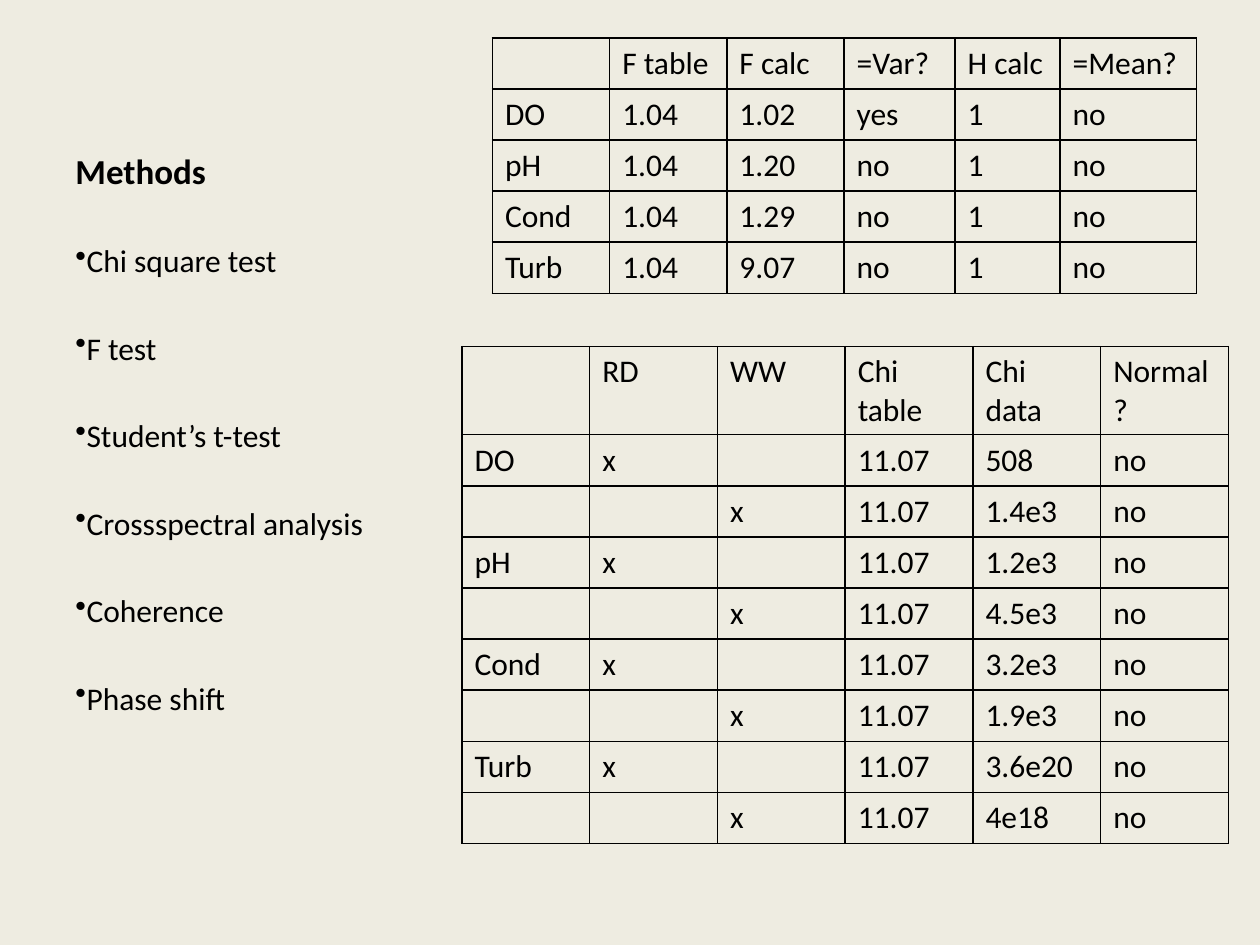
from lxml.etree import SubElement
from pptx import Presentation
from pptx.dml.color import RGBColor
from pptx.enum.text import MSO_ANCHOR as Anchor
from pptx.oxml import parse_xml
from pptx.oxml.ns import nsdecls, qn
from pptx.util import Pt

FONT = "Calibri"
INK = "000000"
PAPER = "EEECE1"
ROW_HEIGHT = 29.2
METHODS = ["Chi square test", "F test", "Student’s t-test",
           "Crossspectral analysis", "Coherence", "Phase shift"]
VARIANCE_TESTS = [
    ["", "F table", "F calc", "=Var?", "H calc", "=Mean?"],
    ["DO", "1.04", "1.02", "yes", "1", "no"],
    ["pH", "1.04", "1.20", "no", "1", "no"],
    ["Cond", "1.04", "1.29", "no", "1", "no"],
    ["Turb", "1.04", "9.07", "no", "1", "no"],
]
CHI_HEADER = ["", "RD", "WW", "Chi table", "Chi data", "Normal?"]
CHI_DATA = {"DO": ("508", "1.4e3"), "pH": ("1.2e3", "4.5e3"),
            "Cond": ("3.2e3", "1.9e3"), "Turb": ("3.6e20", "4e18")}


def color(hex_code):
    return RGBColor.from_string(hex_code)


def style_runs(paragraph, size=18, bold=False):
    for run in paragraph.runs:
        run.font.name = FONT
        run.font.size = Pt(size)
        run.font.bold = bold
        run.font.color.rgb = color(INK)


def add_text_frame(slide, top, height, anchor):
    frame = slide.shapes.add_textbox(Pt(36), Pt(top), Pt(237), Pt(height)).text_frame
    frame.word_wrap = True
    frame.vertical_anchor = anchor
    return frame


def add_heading(slide, wording):
    heading = add_text_frame(slide, 21.6, 91.4, Anchor.BOTTOM)
    heading.text = wording
    style_runs(heading.paragraphs[0], 20, True)


def add_bullets(slide, items):
    body = add_text_frame(slide, 113, 369.4, Anchor.TOP)
    body.margin_top = Pt(24.8)
    body.text = "\n".join(items)
    for index, item in enumerate(body.paragraphs):
        item.space_before = Pt(28.4 if index else 0)
        SubElement(item._p.get_or_add_pPr(), qn("a:buChar")).set("char", "•")
        style_runs(item)


def border_cell(cell):
    properties = cell._tc.get_or_add_tcPr()
    for position, side in enumerate("LRTB"):
        properties.insert(position, parse_xml(
            f'<a:ln{side} {nsdecls("a")} w="{Pt(1)}"><a:solidFill>'
            f'<a:srgbClr val="{INK}"/></a:solidFill></a:ln{side}>'))


def add_grid(slide, left, top, widths, rows):
    table = slide.shapes.add_table(
        len(rows), len(widths), Pt(left), Pt(top),
        Pt(sum(widths)), Pt(ROW_HEIGHT * len(rows))).table
    table.first_row = table.horz_banding = False
    for column, width in zip(table.columns, widths):
        column.width = Pt(width)
    for row, values in zip(table.rows, rows):
        row.height = Pt(ROW_HEIGHT)
        for cell, value in zip(row.cells, values):
            cell.text = value
            cell.fill.background()
            border_cell(cell)
            style_runs(cell.text_frame.paragraphs[0])


def chi_rows():
    rows = [CHI_HEADER]
    for parameter, (rd_value, ww_value) in CHI_DATA.items():
        rows.append([parameter, "x", "", "11.07", rd_value, "no"])
        rows.append(["", "", "x", "11.07", ww_value, "no"])
    return rows


def main():
    deck = Presentation()
    deck.slide_width, deck.slide_height = Pt(720), Pt(540)
    slide = deck.slides.add_slide(deck.slide_layouts[6])
    slide.background.fill.solid()
    slide.background.fill.fore_color.rgb = color(PAPER)
    add_heading(slide, "Methods")
    add_bullets(slide, METHODS)
    add_grid(slide, 281.4, 21.6, [67, 67, 67, 63.4, 60, 78], VARIANCE_TESTS)
    add_grid(slide, 264, 198, [73] * 6, chi_rows())
    deck.save("out.pptx")


if __name__ == "__main__":
    main()
